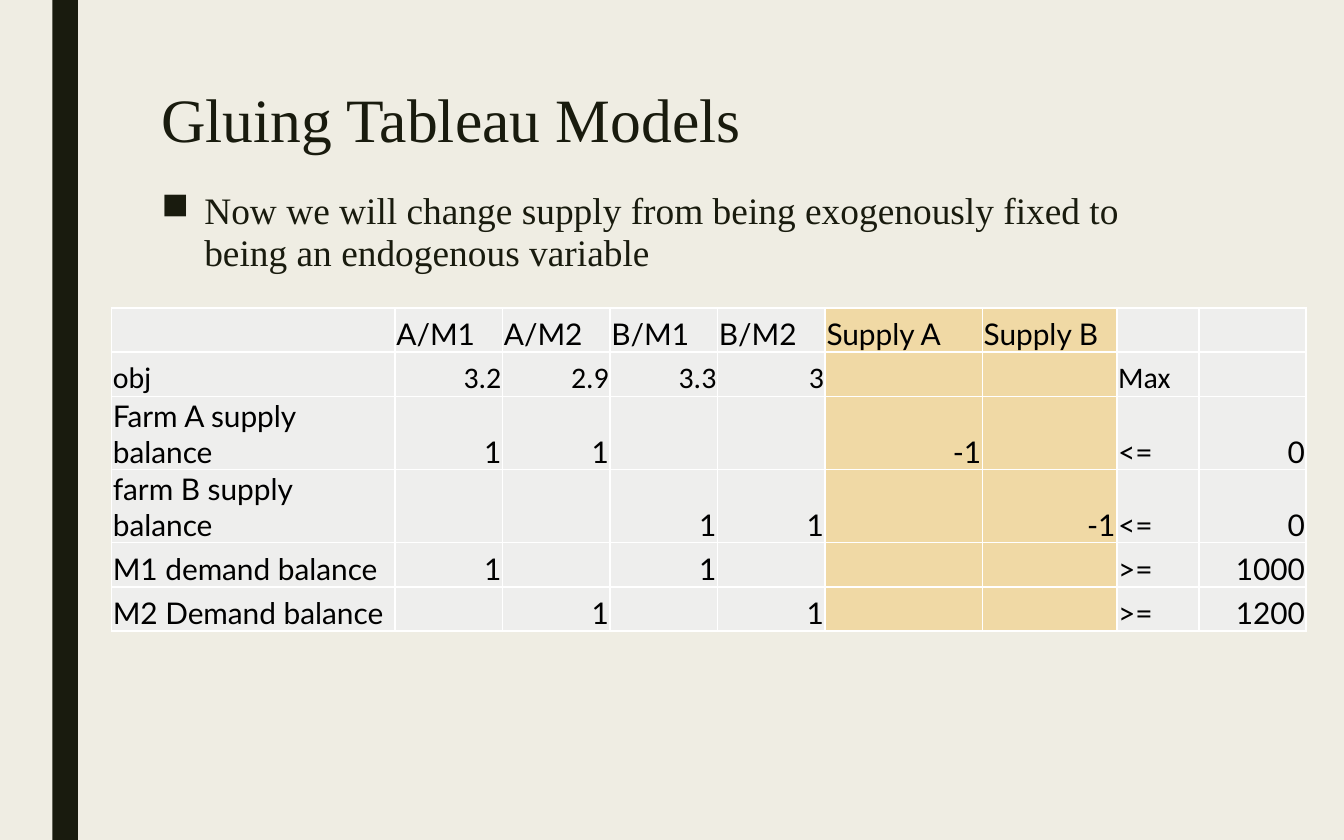
from dataclasses import dataclass

from lxml.etree import SubElement
from pptx import Presentation
from pptx.dml.color import RGBColor
from pptx.enum.shapes import MSO_SHAPE
from pptx.enum.text import MSO_ANCHOR, PP_ALIGN
from pptx.oxml.ns import qn
from pptx.util import Inches, Pt


@dataclass(frozen=True)
class Theme:
    background: str = "EFEDE3"
    ink: str = "191B0E"
    table_text: str = "000000"
    cell: str = "EEEEED"
    highlight: str = "F0D9A5"
    border: str = "FFFFFF"
    text_font: str = "Times New Roman"
    table_font: str = "Lato"
    objective_font: str = "Calibri"
    title_size: int = 33
    body_size: int = 20
    table_size: int = 16


THEME = Theme()
COLUMN_WIDTHS = [2.11, 0.8, 0.8, 0.8, 0.8, 1.17, 1, 0.61, 0.8]
SUPPLY_COLUMNS = (5, 6)
OBJECTIVE_ROW = 1
TABLEAU = [
    ["", "A/M1", "A/M2", "B/M1", "B/M2", "Supply A", "Supply B", "", ""],
    ["obj", 3.2, 2.9, 3.3, 3, "", "", "Max", ""],
    ["Farm A supply balance", 1, 1, "", "", -1, "", "<=", 0],
    ["farm B supply balance", "", "", 1, 1, "", -1, "<=", 0],
    ["M1 demand balance", 1, "", 1, "", "", "", ">=", 1000],
    ["M2 Demand balance", "", 1, "", 1, "", "", ">=", 1200],
]


def write_text(frame, text, size, font=THEME.text_font, color=THEME.ink,
               align=PP_ALIGN.LEFT, line_spacing=None):
    paragraph = frame.paragraphs[0]
    paragraph.alignment = align
    paragraph.line_spacing = line_spacing
    paragraph.font.size = Pt(size)
    run = paragraph.add_run()
    run.text = text
    run.font.size = Pt(size)
    run.font.name = font
    run.font.color.rgb = RGBColor.from_string(color)
    return paragraph


def add_text_frame(slide, left, top, width, height):
    box = slide.shapes.add_textbox(Inches(left), Inches(top), Inches(width), Inches(height))
    frame = box.text_frame
    frame.word_wrap = True
    frame.margin_left = frame.margin_right = Inches(0.08)
    frame.margin_top = frame.margin_bottom = Inches(0.04)
    return frame


def add_side_bar(slide, left, top, width, height):
    bar = slide.shapes.add_shape(MSO_SHAPE.RECTANGLE, Inches(left), Inches(top),
                                 Inches(width), Inches(height))
    bar.shadow.inherit = False
    bar.fill.solid()
    bar.fill.fore_color.rgb = RGBColor.from_string(THEME.ink)
    bar.line.fill.background()


def add_title(slide, text, left, top, width, height):
    frame = add_text_frame(slide, left, top, width, height)
    write_text(frame, text, THEME.title_size, line_spacing=0.89)


def add_bullet(slide, text, left, top, width, height):
    frame = add_text_frame(slide, left, top, width, height)
    paragraph = write_text(frame, text, THEME.body_size, line_spacing=0.94)
    paragraph.space_before = Pt(7.5)
    paragraph.space_after = Pt(1.5)
    properties = paragraph._p.get_or_add_pPr()
    indent = Inches(0.32)
    properties.set("marL", str(indent))
    properties.set("indent", str(-indent))
    bullet = properties.makeelement(qn("a:buChar"), {"char": "■"})
    properties.find(qn("a:spcAft")).addnext(bullet)


def add_borders(cell):
    properties = cell._tc.get_or_add_tcPr()
    for side in ("a:lnL", "a:lnR", "a:lnT", "a:lnB"):
        line = SubElement(properties, qn(side), w=str(Pt(1)))
        fill = SubElement(line, qn("a:solidFill"))
        SubElement(fill, qn("a:srgbClr"), val=THEME.border)


def format_cell(cell, value, fill, font):
    """Write one entry: numbers to the right, words to the left."""
    cell.margin_left = cell.margin_right = cell.margin_top = Inches(0.01)
    cell.margin_bottom = 0
    cell.vertical_anchor = MSO_ANCHOR.BOTTOM
    add_borders(cell)
    cell.fill.solid()
    cell.fill.fore_color.rgb = RGBColor.from_string(fill)
    if value != "":
        align = PP_ALIGN.LEFT if isinstance(value, str) else PP_ALIGN.RIGHT
        write_text(cell.text_frame, str(value), THEME.table_size, font=font,
                   color=THEME.table_text, align=align)


def add_tableau(slide, left, top, row_height):
    table = slide.shapes.add_table(
        len(TABLEAU), len(COLUMN_WIDTHS), Inches(left), Inches(top),
        Inches(sum(COLUMN_WIDTHS)), Inches(row_height * len(TABLEAU))).table
    table.first_row = table.horz_banding = False
    for column, width in zip(table.columns, COLUMN_WIDTHS):
        column.width = Inches(width)
    for row_index, values in enumerate(TABLEAU):
        table.rows[row_index].height = Inches(row_height)
        font = THEME.objective_font if row_index == OBJECTIVE_ROW else THEME.table_font
        for column_index, value in enumerate(values):
            fill = THEME.highlight if column_index in SUPPLY_COLUMNS else THEME.cell
            format_cell(table.cell(row_index, column_index), value, fill, font)


def main():
    presentation = Presentation()
    presentation.slide_width = Inches(10)
    presentation.slide_height = Inches(6.25)
    slide = presentation.slides.add_slide(presentation.slide_layouts[6])
    slide.background.fill.solid()
    slide.background.fill.fore_color.rgb = RGBColor.from_string(THEME.background)
    add_side_bar(slide, 0.39, 0, 0.19, 6.25)
    add_title(slide, "Gluing Tableau Models", 1.12, 0.63, 7.88, 0.67)
    add_bullet(slide, "Now we will change supply from being exogenously fixed to "
               "being an endogenous variable", 1.12, 1.38, 7.88, 3.97)
    add_tableau(slide, 0.83, 2.29, 0.33)
    presentation.save("out.pptx")


if __name__ == "__main__":
    main()
